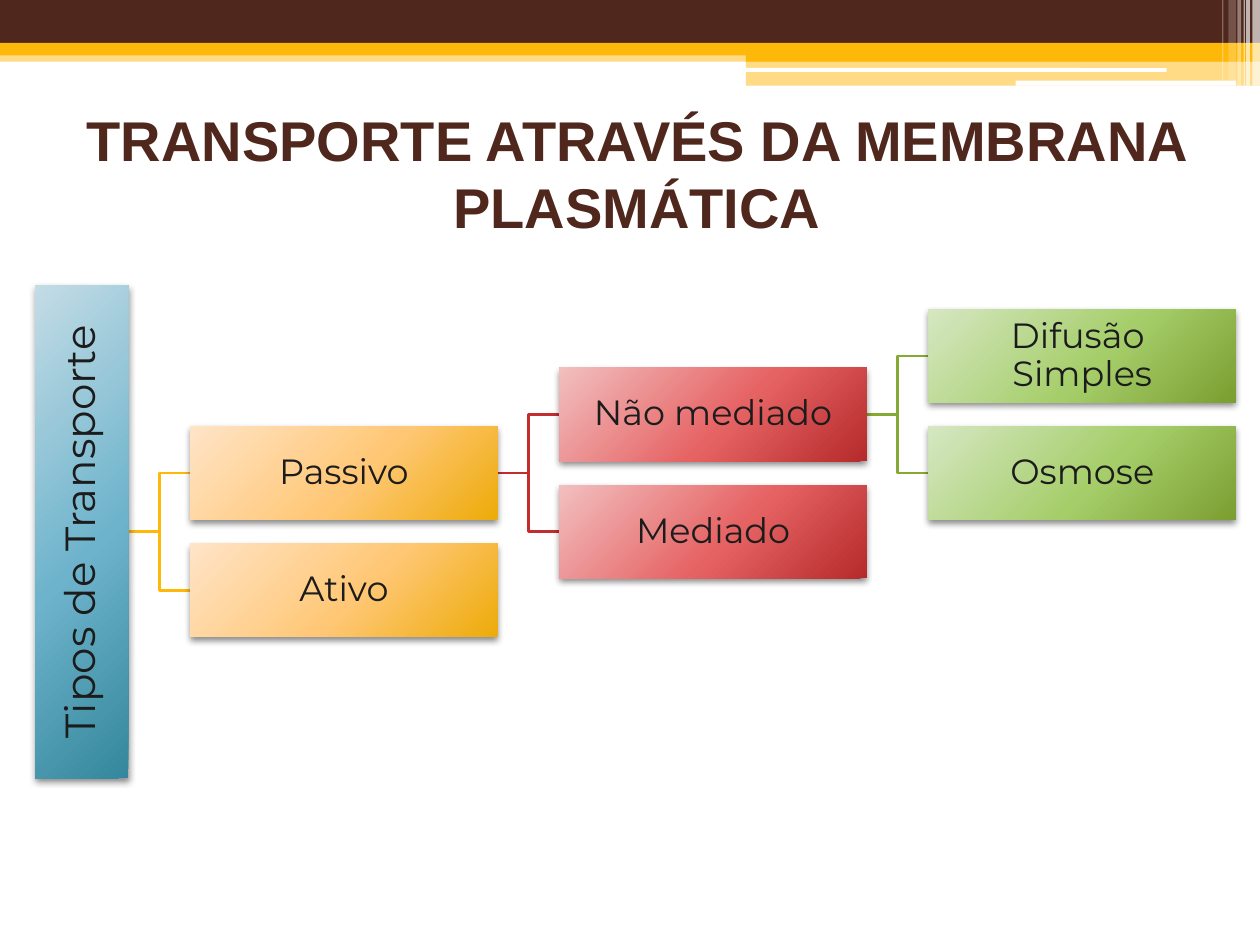
"""Build a slide with a tree of the kinds of transport across the plasma membrane."""
from lxml.etree import SubElement
from pptx import Presentation
from pptx.dml.color import RGBColor
from pptx.enum.shapes import MSO_SHAPE as SHAPE
from pptx.enum.text import MSO_ANCHOR as ANCHOR, PP_ALIGN as ALIGN
from pptx.oxml.ns import qn
from pptx.util import Inches, Pt

TITLE = "TRANSPORTE ATRAVÉS DA MEMBRANA PLASMÁTICA"
TREE = ("Tipos de Transporte", [
    ("Passivo", [
        ("Não mediado", [("Difusão \nSimples", []), ("Osmose", [])]),
        ("Mediado", []),
    ]),
    ("Ativo", []),
])
COLORS = {"brown": "4F271C", "gold": "FEB80A", "white": "FFFFFF", "ink": "1C1C1C", "shadow": "000000"}
LEVELS = [
    {"line": None, "fade": ("C3DCE6", "6DB3CB", "34879C")},
    {"line": "FEB80A", "fade": ("FFE4C7", "FFC775", "EDAB09")},
    {"line": "C32D2E", "fade": ("F2BFBF", "E66364", "B62A2B")},
    {"line": "84AA33", "fade": ("D6E7C2", "A5CE6A", "7B9E30")},
]
BANDS = [
    (0, 0.4, 10, 0.09, "gold", 50),
    (0, 0, 10, 0.34, "brown", 100),
    (0, 0.34, 10, 0.1, "gold", 100),
    (5.92, 0.39, 4.08, 0.1, "gold", 100),
    (5.92, 0.48, 4.08, 0.2, "gold", 50),
]
SLOTS = [(5.91, 0.54, 3.35, 0.03), (8.06, 0.64, 1.75, 0.04)]
STRIPES = [
    (9.94, 0.06, 0.68, 65), (9.89, 0.03, 0.68, 65), (9.87, 0.01, 0.68, 60),
    (9.82, 0.03, 0.68, 40), (9.75, 0.06, 0.64, 20), (9.7, 0.01, 0.64, 30),
]
ROOT_LEFT, ROOT_MIDDLE, ROOT_LENGTH = 0.28, 4.22, 3.91
BOX_WIDTH, BOX_HEIGHT, GAP, ROW = 2.44, 0.74, 0.49, 0.93

deck = Presentation()
deck.slide_width, deck.slide_height = Inches(10), Inches(7.5)
slide = deck.slides.add_slide(deck.slide_layouts[6])


def add_bar(left, top, width, height, kind=SHAPE.RECTANGLE):
    bar = slide.shapes.add_shape(kind, *map(Inches, (left, top, width, height)))
    bar.shadow.inherit = False
    bar.line.fill.background()
    return bar


def paint(bar, color, opacity=100):
    bar.fill.solid()
    bar.fill.fore_color.rgb = RGBColor.from_string(COLORS[color])
    if opacity < 100:
        tint = bar.fill._xPr.find(".//" + qn("a:srgbClr"))
        SubElement(tint, qn("a:alpha"), val=str(opacity * 1000))


def fade(box, colors):
    box.fill.gradient()
    gradient = box._element.spPr.find(qn("a:gradFill"))
    for part in list(gradient):
        gradient.remove(part)
    stops = SubElement(gradient, qn("a:gsLst"))
    for share, color in zip((0, 55, 100), colors):
        stop = SubElement(stops, qn("a:gs"), pos=str(share * 1000))
        SubElement(stop, qn("a:srgbClr"), val=color)
    circle = SubElement(gradient, qn("a:path"), path="circle")
    SubElement(circle, qn("a:fillToRect"), l="-40000", t="-90000", r="140000", b="190000")


def cast_shadow(box):
    effects = box._element.spPr.find(qn("a:effectLst"))
    shadow = SubElement(effects, qn("a:outerShdw"), blurRad=str(Pt(4)), dist=str(Pt(2)),
                        dir="5400000", rotWithShape="0")
    color = SubElement(shadow, qn("a:srgbClr"), val=COLORS["shadow"])
    SubElement(color, qn("a:alpha"), val="45000")


def write(holder, text, *, size, font, color, bold=False, spacing=1.0, inset=None):
    frame = holder.text_frame
    frame.word_wrap = True
    frame.vertical_anchor = ANCHOR.MIDDLE
    if inset is not None:
        frame.margin_left = frame.margin_right = Inches(inset)
        frame.margin_top = frame.margin_bottom = Inches(inset)
    frame.text = text
    for paragraph in frame.paragraphs:
        paragraph.alignment = ALIGN.CENTER
        paragraph.line_spacing = spacing
        for run in paragraph.runs:
            run.font.size, run.font.name, run.font.bold = Pt(size), font, bold
            run.font.color.rgb = RGBColor.from_string(COLORS[color])


def place(node, level=0, middle=ROOT_MIDDLE):
    """Yield label, level, middle and parent middle for each descendant of a node."""
    children = node[1]
    for index, child in enumerate(children):
        child_middle = middle + (index - (len(children) - 1) / 2) * ROW
        yield child[0], level + 1, child_middle, middle
        yield from place(child, level + 1, child_middle)


def column_left(level):
    return ROOT_LEFT + BOX_HEIGHT + GAP + (level - 1) * (BOX_WIDTH + GAP)


def add_branch(level, middle, parent_middle):
    end = column_left(level)
    start, bend = end - GAP, end - GAP / 2
    builder = slide.shapes.build_freeform(Inches(start), Inches(parent_middle), scale=1.0)
    corners = [(bend, parent_middle), (bend, middle), (end, middle)]
    builder.add_line_segments([(Inches(x), Inches(y)) for x, y in corners], close=False)
    branch = builder.convert_to_shape()
    branch.shadow.inherit = False
    branch.fill.background()
    branch.line.color.rgb = RGBColor.from_string(LEVELS[level]["line"])
    branch.line.width = Pt(1.5)


def add_node(label, level, left, middle, width, size, inset):
    box = add_bar(left, middle - BOX_HEIGHT / 2, width, BOX_HEIGHT)
    fade(box, LEVELS[level]["fade"])
    cast_shadow(box)
    write(box, label, size=size, font="Montserrat", color="ink", spacing=0.9, inset=inset)
    return box


for *place_on_slide, color, opacity in BANDS:
    paint(add_bar(*place_on_slide), color, opacity)
for slot in SLOTS:
    paint(add_bar(*slot, kind=SHAPE.ROUNDED_RECTANGLE), "white")
for left, width, height, opacity in STRIPES:
    paint(add_bar(left, 0, width, height), "white", opacity)

title = slide.shapes.add_textbox(*map(Inches, (0.35, 0.94, 9.41, 0.86)))
write(title, TITLE, size=32, font="Arial", color="brown", bold=True)

nodes = list(place(TREE))
for label, level, middle, parent_middle in nodes:
    add_branch(level, middle, parent_middle)
root_left = ROOT_LEFT + (BOX_HEIGHT - ROOT_LENGTH) / 2
root = add_node(TREE[0], 0, root_left, ROOT_MIDDLE, ROOT_LENGTH, size=24, inset=0.02)
root.rotation = 270
for label, level, middle, parent_middle in nodes:
    add_node(label, level, column_left(level), middle, BOX_WIDTH, size=20, inset=0.01)

deck.save("out.pptx")
